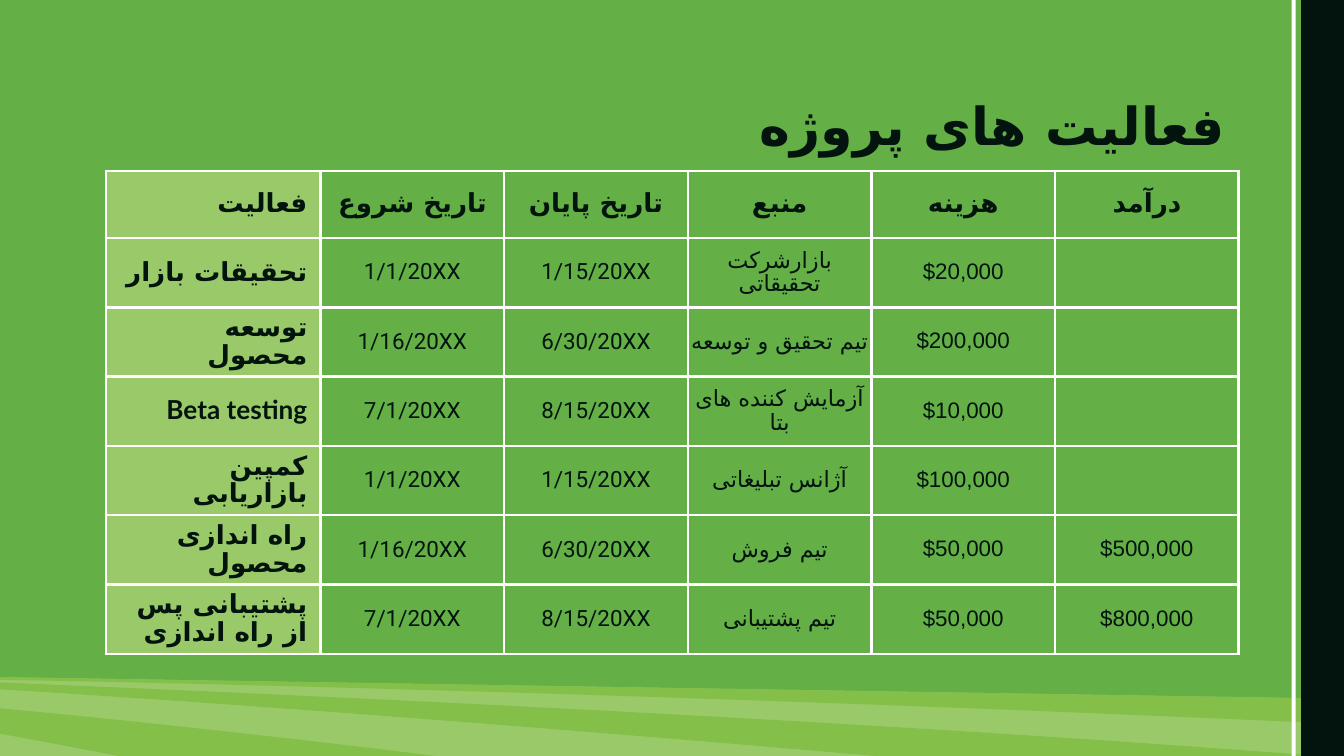
from lxml import etree
from pptx import Presentation
from pptx.dml.color import RGBColor
from pptx.enum.shapes import MSO_SHAPE
from pptx.enum.text import MSO_ANCHOR, PP_ALIGN
from pptx.oxml import parse_xml
from pptx.oxml.ns import nsdecls, qn
from pptx.util import Cm, Pt

RECTANGLE = MSO_SHAPE.RECTANGLE
MIDDLE, BOTTOM = MSO_ANCHOR.MIDDLE, MSO_ANCHOR.BOTTOM
RIGHT, CENTER = PP_ALIGN.RIGHT, PP_ALIGN.CENTER

INK, WHITE = "02140D", "FFFFFF"
GREEN, PALE, LIME = "64B047", "9AC96A", "83BF49"
WIDTH, HEIGHT = 25.4, 14.29

TITLE = "فعالیت های پروژه"
ACTIVITIES = [
    ("فعالیت", "تاریخ شروع", "تاریخ پایان", "منبع", "هزینه", "درآمد"),
    ("تحقیقات بازار", "1/1/20XX", "1/15/20XX", "بازارشرکت تحقیقاتی", "$20,000", ""),
    ("توسعه محصول", "1/16/20XX", "6/30/20XX", "تیم تحقیق و توسعه", "$200,000", ""),
    ("Beta testing", "7/1/20XX", "8/15/20XX", "آزمایش کننده های بتا", "$10,000", ""),
    ("کمپین بازاریابی", "1/1/20XX", "1/15/20XX", "آژانس تبلیغاتی", "$100,000", ""),
    ("راه اندازی محصول", "1/16/20XX", "6/30/20XX", "تیم فروش", "$50,000", "$500,000"),
    ("پشتیبانی پس از راه اندازی", "7/1/20XX", "8/15/20XX", "تیم پشتیبانی", "$50,000", "$800,000"),
]
COLUMN_WIDTHS = [4.06] + [3.47] * 5
ROW_HEIGHTS = [1.27] + [1.31] * 6

HILLS = [
    (PALE, [(0, 12.8), (0, HEIGHT), (WIDTH, HEIGHT), (WIDTH, 13.21)]),
    (LIME, [(WIDTH, 13.69), (WIDTH, 13.21), (0, 12.8), (0, 12.85),
            (3.18, 12.9, 14.1, 13.16, WIDTH, 13.69)]),
    (LIME, [(0, 13.03), (5.36, 13.36, 11.35, 13.84, 16.54, HEIGHT),
            (24.92, HEIGHT), (15.27, 13.54, 3.76, 13.06, 0, 12.9)]),
    (LIME, [(0, 13.87), (0.74, 14, 1.5, 14.15, 2.24, HEIGHT),
            (8.23, HEIGHT), (5.26, 13.92, 1.88, 13.56, 0, 13.39)]),
]
BARS = [(24.59, 0.81, INK), (24.41, 0.08, WHITE)]

HEADING = {"size": Pt(14), "name": "Lato", "bold": True}
DETAIL = {"size": Pt(12), "name": "Roboto", "bold": False}


def color(code):
    return RGBColor.from_string(code)


def paint(shape, code):
    shape.shadow.inherit = False
    shape.fill.solid()
    shape.fill.fore_color.rgb = color(code)
    shape.line.fill.background()


def add_hill(page, steps):
    ends = [(Cm(step[-2]), Cm(step[-1])) for step in steps]
    builder = page.shapes.build_freeform(*ends[0])
    builder.add_line_segments(ends[1:], close=False)
    hill = builder.convert_to_shape()
    lines = list(hill._element.iter(qn("a:lnTo")))
    for line, step in zip(lines, steps[1:]):
        if len(step) == 6:
            line.tag = qn("a:cubicBezTo")
            for place, (x, y) in enumerate([step[:2], step[2:4]]):
                handle = etree.Element(qn("a:pt"))
                handle.set("x", str(Cm(x) - hill.left))
                handle.set("y", str(Cm(y) - hill.top))
                line.insert(place, handle)
    etree.SubElement(lines[-1].getparent(), qn("a:close"))
    return hill


def write(frame, text, align, style):
    para = frame.paragraphs[0]
    para.alignment = align
    para.line_spacing = 0.9
    para._p.get_or_add_pPr().set("rtl", "1")
    span = para.add_run()
    span.text = text
    for name, value in style.items():
        setattr(span.font, name, value)
    span.font.color.rgb = color(INK)
    script_font = "Arial" if text.isascii() else "DejaVu Sans"
    etree.SubElement(span.font._element, qn("a:cs")).set("typeface", script_font)


def add_borders(cell):
    properties = cell._tc.get_or_add_tcPr()
    for side in ("lnL", "lnR", "lnT", "lnB"):
        properties.append(parse_xml(
            f'<a:{side} {nsdecls("a")} w="{Pt(1.5)}"><a:solidFill>'
            f'<a:srgbClr val="{WHITE}"/></a:solidFill></a:{side}>'))


def add_scenery(page):
    for code, steps in HILLS:
        paint(add_hill(page, steps), code)
    for left, width, code in BARS:
        bar = page.shapes.add_shape(RECTANGLE, Cm(left), 0, Cm(width), Cm(HEIGHT))
        paint(bar, code)


def add_title(page):
    title = page.shapes.title
    title.left, title.top, title.width, title.height = Cm(2), Cm(1.5), Cm(21.39), Cm(1.6)
    frame = title.text_frame
    frame.word_wrap = True
    frame.vertical_anchor = BOTTOM
    for side, margin in {"left": 0.25, "right": 0.25, "top": 0.25, "bottom": 0.13}.items():
        setattr(frame, f"margin_{side}", Cm(margin))
    write(frame, TITLE, RIGHT, {**HEADING, "size": Pt(28)})


def add_activities(page):
    table = page.shapes.add_table(
        len(ACTIVITIES), len(COLUMN_WIDTHS), Cm(2), Cm(3.23),
        Cm(sum(COLUMN_WIDTHS)), Cm(sum(ROW_HEIGHTS))).table
    table.first_row = table.horz_banding = False
    for column, width in zip(table.columns, COLUMN_WIDTHS):
        column.width = Cm(width)
    for row, height in zip(table.rows, ROW_HEIGHTS):
        row.height = Cm(height)
    for row, texts in enumerate(ACTIVITIES):
        for column, text in enumerate(texts):
            cell = table.cell(row, column)
            label = row == 0 or column == 0
            cell.vertical_anchor = MIDDLE
            cell.margin_left = cell.margin_right = Cm(0.25 if label else 0)
            cell.margin_top = cell.margin_bottom = Cm(0.18 if row == 0 else 0)
            add_borders(cell)
            if column == 0:
                cell.fill.solid()
                cell.fill.fore_color.rgb = color(PALE)
            else:
                cell.fill.background()
            if text:
                write(cell.text_frame, text, CENTER if column else RIGHT,
                      HEADING if label else DETAIL)


def main():
    deck = Presentation()
    deck.slide_width, deck.slide_height = Cm(WIDTH), Cm(HEIGHT)
    page = deck.slides.add_slide(deck.slide_layouts[5])
    page.background.fill.solid()
    page.background.fill.fore_color.rgb = color(GREEN)
    add_scenery(page)
    add_title(page)
    add_activities(page)
    deck.save("out.pptx")


if __name__ == "__main__":
    main()
